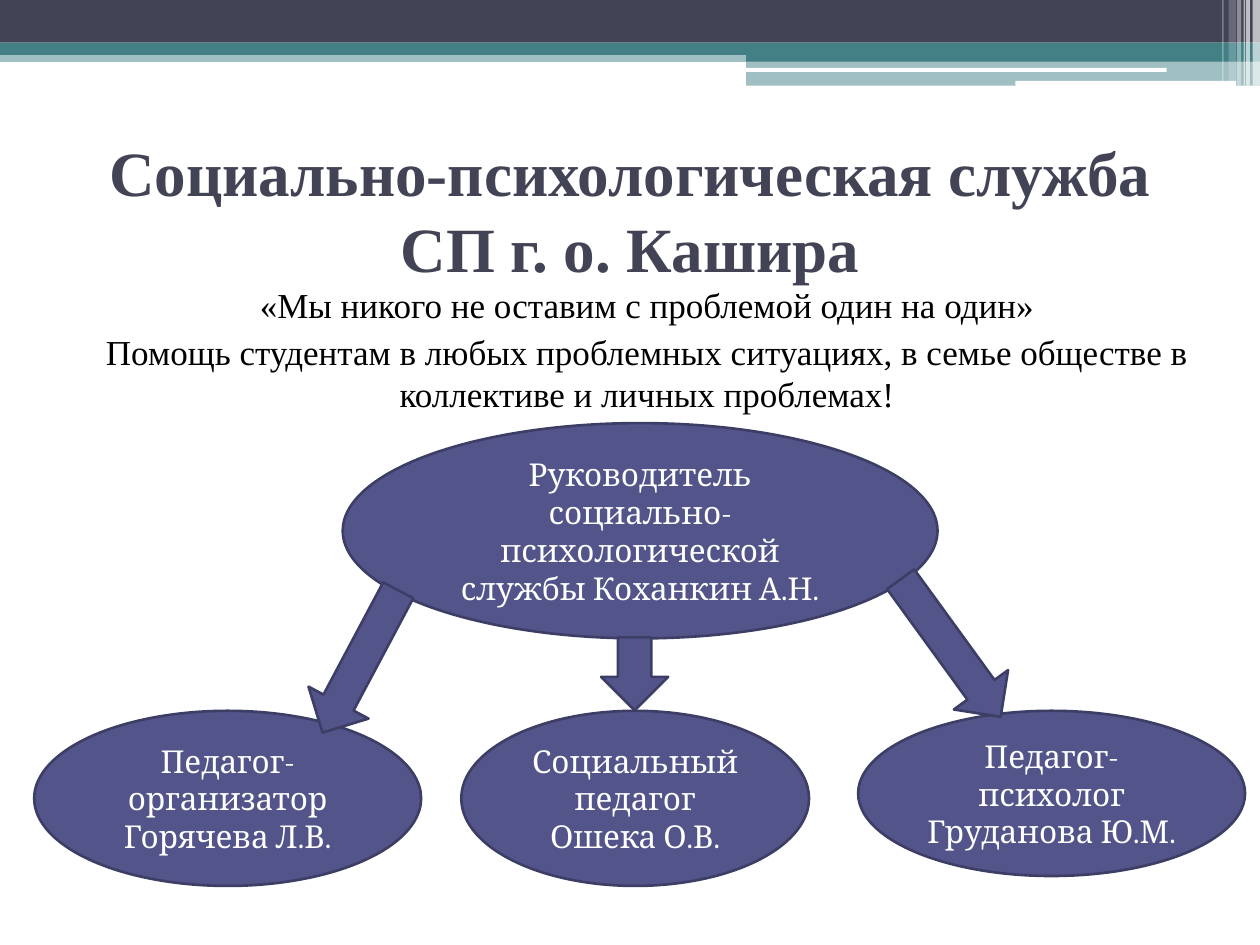
import pptx
import pptx.dml.color
import pptx.enum.shapes
import pptx.enum.text
import pptx.oxml
import pptx.oxml.ns
import pptx.util

Cm = pptx.util.Cm
Pt = pptx.util.Pt
RGBColor = pptx.dml.color.RGBColor
MSO_SHAPE = pptx.enum.shapes.MSO_SHAPE
MSO_ANCHOR = pptx.enum.text.MSO_ANCHOR
PP_ALIGN = pptx.enum.text.PP_ALIGN

SLATE = RGBColor(0x42, 0x44, 0x56)
TEAL = RGBColor(0x43, 0x80, 0x86)
WHITE = RGBColor(0xFF, 0xFF, 0xFF)
BLACK = RGBColor(0x00, 0x00, 0x00)
VIOLET = RGBColor(0x53, 0x54, 0x8A)
DARK_VIOLET = RGBColor(0x3D, 0x3E, 0x66)

BANDS = [
    (0, 1.02, 25.4, 0.23, TEAL, 50),
    (0, 0, 25.4, 0.86, SLATE, 100),
    (0, 0.86, 25.4, 0.25, TEAL, 100),
    (15.04, 0.99, 10.36, 0.25, TEAL, 100),
    (15.04, 1.22, 10.36, 0.51, TEAL, 50),
]
HIGHLIGHTS = [(15.01, 1.37, 8.51, 0.08), (20.47, 1.63, 4.45, 0.1)]
STRIPES = [
    (25.25, 0.15, 1.73, 65),
    (25.12, 0.08, 1.73, 65),
    (25.07, 0.03, 1.73, 60),
    (24.94, 0.08, 1.73, 40),
    (24.77, 0.15, 1.63, 20),
    (24.64, 0.03, 1.63, 30),
]
MOTTO = [
    "«Мы никого не оставим с проблемой один на один»",
    "Помощь студентам в любых проблемных ситуациях, в семье обществе в "
    "коллективе и личных проблемах!",
]
STAFF = [
    (6.91, 8.53, 11.99, 4.34,
     ["Руководитель социально-психологической службы Коханкин А.Н."]),
    (0.69, 14.33, 7.8, 3.53, ["Педагог-организатор Горячева Л.В."]),
    (9.3, 14.33, 7.01, 3.53, ["Социальный педагог", "Ошека О.В."]),
    (17.3, 14.33, 7.8, 3.33, ["Педагог-психолог", "Груданова Ю.М."]),
]
ARROWS = [
    (6.58, 11.71, 1.37, 3.25, 28),
    (12.12, 12.85, 1.35, 1.47, 0),
    (18.49, 11.35, 1.35, 3.43, 324),
]


class SlideBuilder:
    """Holds the chart style and draws each kind of element on one slide."""

    def __init__(self, slide):
        self.slide = slide
        self.heading_font = "Times New Roman"
        self.label_font = "Cambria"

    def set_text(self, text_frame, lines, font_name, size, color, bold=False, gap=0):
        text_frame.word_wrap = True
        text_frame.auto_size = pptx.enum.text.MSO_AUTO_SIZE.NONE
        text_frame.text = "\n".join(lines)
        for index, paragraph in enumerate(text_frame.paragraphs):
            paragraph.alignment = PP_ALIGN.CENTER
            paragraph.space_before = Pt(gap if index else 0)
            for run in paragraph.runs:
                run.font.name = font_name
                run.font.size = Pt(size)
                run.font.bold = bold
                run.font.color.rgb = color

    def title(self, left, top, width, height, text):
        shape = self.slide.shapes.title
        shape.left, shape.top = Cm(left), Cm(top)
        shape.width, shape.height = Cm(width), Cm(height)
        shape.text_frame.vertical_anchor = MSO_ANCHOR.MIDDLE
        self.set_text(shape.text_frame, [text], self.heading_font, 36, SLATE, bold=True)

    def body(self, left, top, width, height, lines):
        shape = self.slide.shapes.add_textbox(Cm(left), Cm(top), Cm(width), Cm(height))
        shape.text_frame.margin_left = Cm(0.55)
        self.set_text(shape.text_frame, lines, self.heading_font, 20, BLACK, gap=3)

    def block(self, kind, left, top, width, height, color, opacity=100):
        shape = self.slide.shapes.add_shape(
            kind, Cm(left), Cm(top), Cm(width), Cm(height))
        shape.shadow.inherit = False
        shape.fill.solid()
        shape.fill.fore_color.rgb = color
        shape.line.fill.background()
        if opacity < 100:
            color_element = shape.element.spPr.find(".//" + pptx.oxml.ns.qn("a:srgbClr"))
            alpha = pptx.oxml.parse_xml(
                f'<a:alpha {pptx.oxml.ns.nsdecls("a")} val="{opacity * 1000}"/>')
            color_element.append(alpha)
        return shape

    def outlined(self, kind, left, top, width, height):
        shape = self.block(kind, left, top, width, height, VIOLET)
        shape.line.color.rgb = DARK_VIOLET
        shape.line.width = Pt(1.5)
        return shape

    def person(self, left, top, width, height, lines):
        shape = self.outlined(MSO_SHAPE.OVAL, left, top, width, height)
        shape.text_frame.vertical_anchor = MSO_ANCHOR.MIDDLE
        self.set_text(shape.text_frame, lines, self.label_font, 18, WHITE)

    def arrow(self, left, top, width, height, rotation):
        shape = self.outlined(MSO_SHAPE.DOWN_ARROW, left, top, width, height)
        shape.rotation = rotation


def main():
    presentation = pptx.Presentation()
    presentation.slide_width = Cm(25.4)
    presentation.slide_height = Cm(19.05)
    builder = SlideBuilder(presentation.slides.add_slide(presentation.slide_layouts[5]))

    for left, top, width, height, color, opacity in BANDS:
        builder.block(MSO_SHAPE.RECTANGLE, left, top, width, height, color, opacity)
    for highlight in HIGHLIGHTS:
        builder.block(MSO_SHAPE.ROUNDED_RECTANGLE, *highlight, WHITE)
    for left, width, height, opacity in STRIPES:
        builder.block(MSO_SHAPE.RECTANGLE, left, 0, width, height, WHITE, opacity)

    builder.body(0.69, 5.59, 24.41, 12.01, MOTTO)
    builder.title(1.27, 2.31, 22.86, 3.81,
                  "Социально-психологическая служба СП г. о. Кашира")
    for person in STAFF:
        builder.person(*person)
    for arrow in ARROWS:
        builder.arrow(*arrow)

    presentation.save("out.pptx")


if __name__ == "__main__":
    main()
